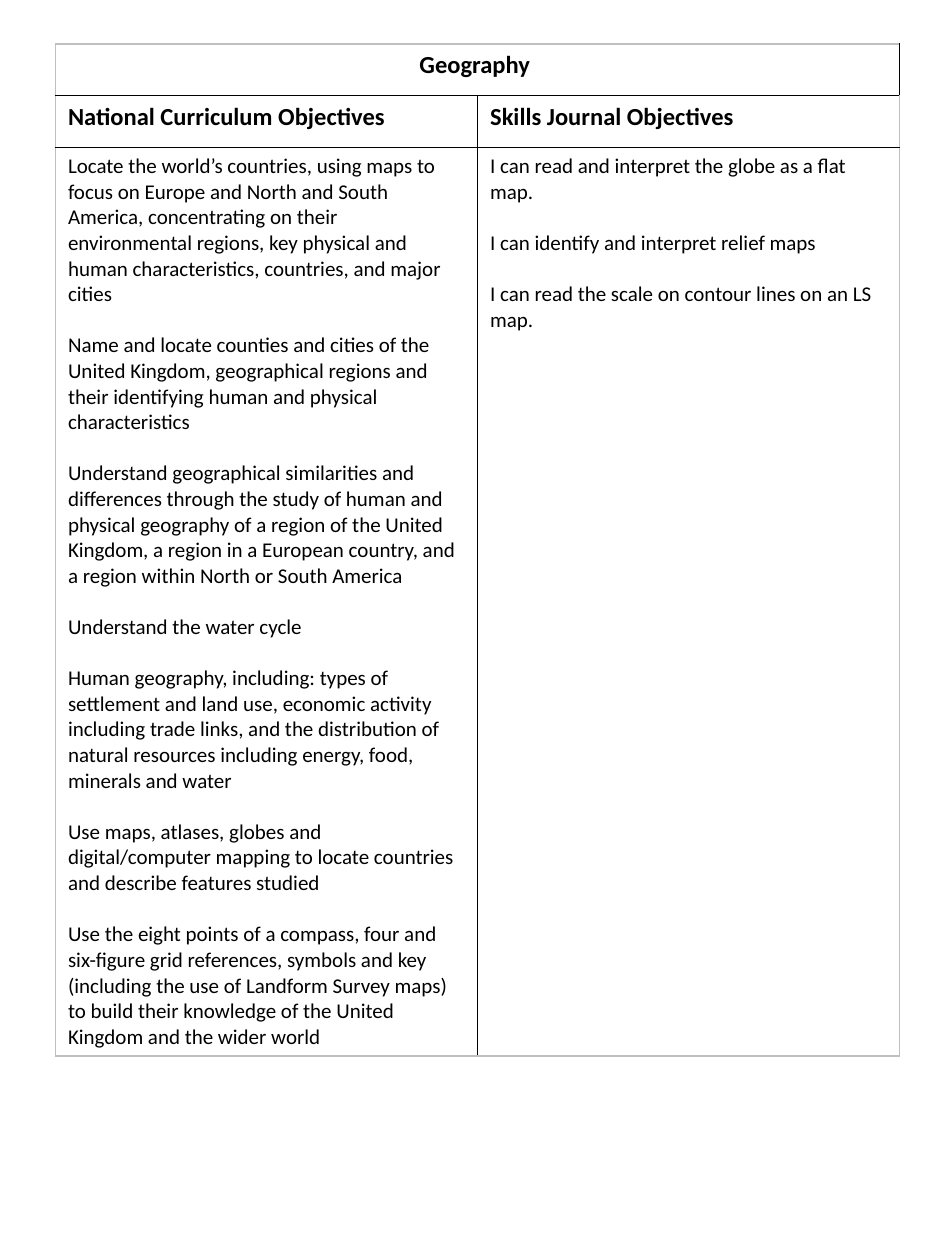
from lxml import etree
from pptx import Presentation
from pptx.dml.color import RGBColor
from pptx.enum.text import PP_ALIGN
from pptx.oxml.ns import qn
from pptx.util import Inches, Pt

CENTER = PP_ALIGN.CENTER
LEFT = PP_ALIGN.LEFT
COLORS = {"ink": "000000", "edge": "BFBFBF", "paper": "FFFFFF"}
FONT = "Calibri"
WIDTH, HEIGHT = 7.5, 10
ROWS = [0.41, 0.41, 7.2]
COLS = [3.35, 3.35]
GAP = 14.65

TITLE = "Geography "
HEADS = ["National Curriculum Objectives", "Skills Journal Objectives"]
GOALS = [
    [
        "Locate the world’s countries, using maps to focus on Europe and North "
        "and South America, concentrating on their environmental regions, key "
        "physical and human characteristics, countries, and major cities",
        "Name and locate counties and cities of the United Kingdom, geographical "
        "regions and their identifying human and physical characteristics",
        "Understand geographical similarities and differences through the study "
        "of human and physical geography of a region of the United Kingdom, a "
        "region in a European country, and a region within North or South America",
        "Understand the water cycle",
        "Human geography, including: types of settlement and land use, economic "
        "activity including trade links, and the distribution of natural "
        "resources including energy, food, minerals and water",
        "Use maps, atlases, globes and digital/computer mapping to locate "
        "countries and describe features studied",
        "Use the eight points of a compass, four and six-figure grid references, "
        "symbols and key (including the use of Landform Survey maps) to build "
        "their knowledge of the United Kingdom and the wider world",
    ],
    [
        "I can read and interpret the globe as a flat map.",
        "I can identify and interpret relief maps",
        "I can read the scale on contour lines on an LS map.",
    ],
]


def color(name):
    """Return a palette colour."""
    return RGBColor.from_string(COLORS[name])


def frame(cell, row, col):
    """Fill a cell and draw its lines, pale on the table's outer edge."""
    props = cell._tc.get_or_add_tcPr()
    outer = {"lnL": col == 0, "lnR": col == len(COLS) - 1,
             "lnT": row == 0, "lnB": row == len(ROWS) - 1}
    for side, pale in outer.items():
        line = etree.SubElement(props, qn(f"a:{side}"), w=str(Pt(1)))
        fill = etree.SubElement(line, qn("a:solidFill"))
        tone = COLORS["edge" if pale else "ink"]
        etree.SubElement(fill, qn("a:srgbClr"), val=tone)
    cell.fill.solid()
    cell.fill.fore_color.rgb = color("paper")


def write(cell, texts, size, bold=False, align=LEFT):
    """Write spaced paragraphs into a cell."""
    body = cell.text_frame
    for i, text in enumerate(texts):
        para = body.add_paragraph() if i else body.paragraphs[0]
        para.text = text
        para.alignment = align
        para.space_before = Pt(GAP if i else 0)
        para.font.name = FONT
        para.font.size = Pt(size)
        para.font.bold = bold
        para.font.color.rgb = color("ink")


def add_grid(slide):
    """Add the bordered table and size its rows and columns."""
    table = slide.shapes.add_table(
        len(ROWS), len(COLS), Inches(0.44), Inches(0.35),
        Inches(sum(COLS)), Inches(sum(ROWS))).table
    table.first_row = False
    table.horz_banding = False
    for row, size in zip(table.rows, ROWS):
        row.height = Inches(size)
    for col, size in zip(table.columns, COLS):
        col.width = Inches(size)
    for i, cell in enumerate(table.iter_cells()):
        frame(cell, *divmod(i, len(COLS)))
    table.cell(0, 0).merge(table.cell(0, len(COLS) - 1))
    return table


def main():
    """Build the objectives slide."""
    deck = Presentation()
    deck.slide_width, deck.slide_height = Inches(WIDTH), Inches(HEIGHT)
    slide = deck.slides.add_slide(deck.slide_layouts[6])
    table = add_grid(slide)
    write(table.cell(0, 0), [TITLE], 14, True, CENTER)
    for col, (head, goals) in enumerate(zip(HEADS, GOALS)):
        write(table.cell(1, col), [head], 14, True)
        write(table.cell(2, col), goals, 12)
    deck.save("out.pptx")


if __name__ == "__main__":
    main()
